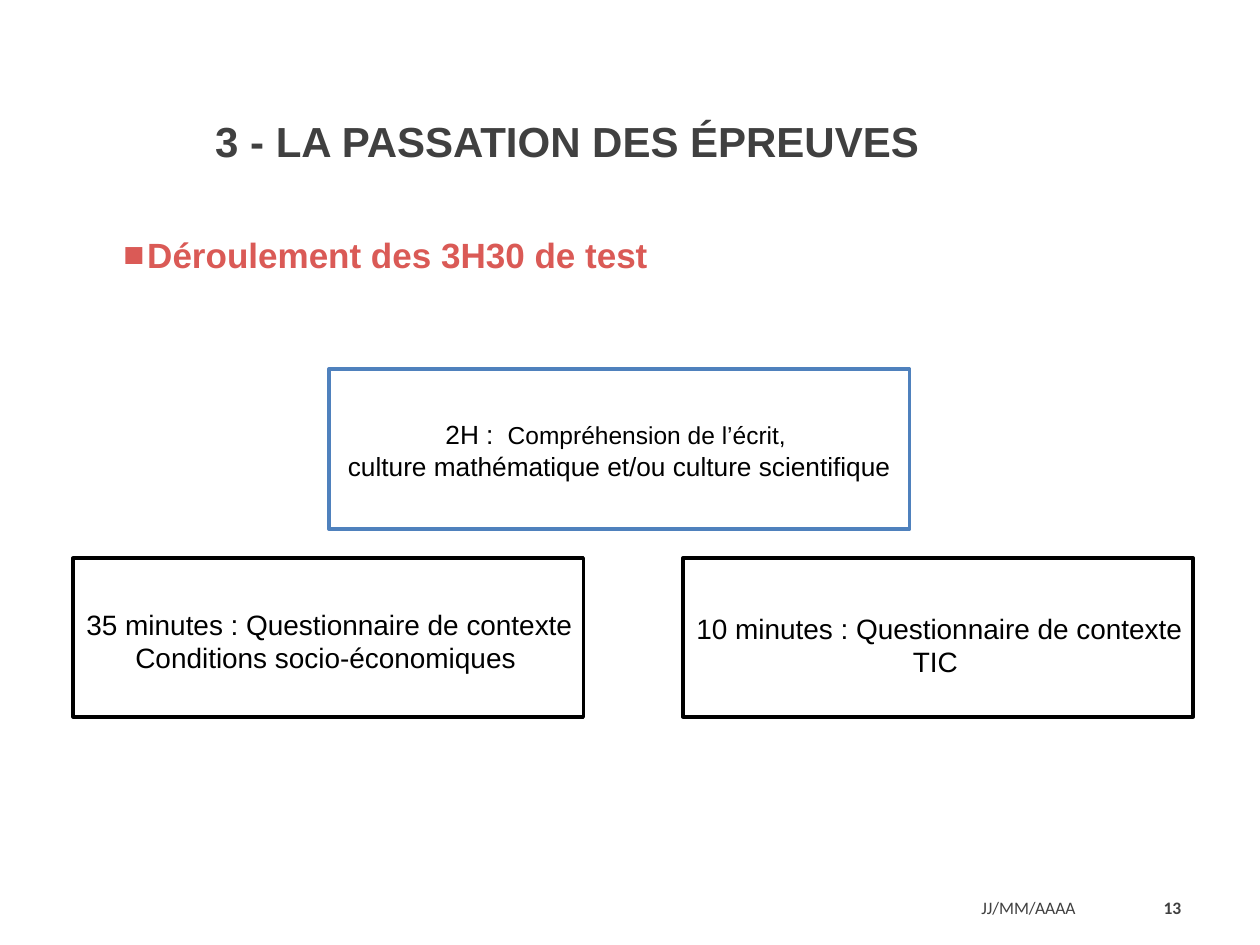
from pptx import Presentation
from pptx.dml.color import RGBColor
from pptx.enum.shapes import MSO_SHAPE
from pptx.enum.text import MSO_ANCHOR, PP_ALIGN
from pptx.oxml.ns import qn
from pptx.util import Inches, Pt
from lxml.etree import SubElement

BLACK = RGBColor(0x00, 0x00, 0x00)
GRAY = RGBColor(0x40, 0x40, 0x40)
RED = RGBColor(0xDA, 0x5A, 0x56)
BLUE = RGBColor(0x4F, 0x81, 0xBD)


def add_text(left, top, width, height, anchor=MSO_ANCHOR.TOP):
    box = slide.shapes.add_textbox(Inches(left), Inches(top), Inches(width), Inches(height))
    frame = box.text_frame
    frame.word_wrap = True
    frame.vertical_anchor = anchor
    return frame


def add_run(paragraph, text, size, color, bold=False, font="Arial"):
    run = paragraph.add_run()
    run.text = text
    run.font.name = font
    run.font.size = Pt(size)
    run.font.bold = bold
    run.font.color.rgb = color


prs = Presentation()
prs.slide_width = Inches(10)
prs.slide_height = Inches(7.5)
slide = prs.slides.add_slide(prs.slide_layouts[6])

title = add_text(1.61, 0.71, 8.62, 0.82, MSO_ANCHOR.MIDDLE)
add_run(title.paragraphs[0], "3 - LA PASSATION DES ÉPREUVES", 24, GRAY, True)

heading = add_text(0.88, 1.8, 7.71, 0.68).paragraphs[0]
heading_format = heading._p.get_or_add_pPr()
heading_format.set("marL", str(Inches(0.19)))
heading_format.set("indent", str(-Inches(0.19)))
bullet_color = SubElement(heading_format, qn("a:buClr"))
SubElement(bullet_color, qn("a:srgbClr")).set("val", str(RED))
SubElement(heading_format, qn("a:buFont")).set("typeface", "Arial")
SubElement(heading_format, qn("a:buChar")).set("char", "■")
add_run(heading, "Déroulement des 3H30 de test", 20, RED, True)

stages = [
    ((0.58, 4.43, 4.05, 1.26), BLACK, (0.4, 4.54, 4.43, 1.18),
     [[("35 minutes : Questionnaire de contexte", 16)],
      [("Conditions socio-économiques ", 16)]]),
    ((2.61, 2.93, 4.61, 1.27), BLUE, (2.61, 3.04, 4.61, 1.14),
     [[("2H : ", 15), (" Compréhension de l’écrit, ", 14)],
      [("culture mathématique et/ou culture scientifique", 15)]]),
    ((5.42, 4.43, 4.05, 1.26), BLACK, (5.24, 4.57, 4.43, 1.18),
     [[("10 minutes : Questionnaire de contexte", 16)],
      [("TIC ", 16)]]),
]
for border_place, border_color, label_place, lines in stages:
    border = slide.shapes.add_shape(MSO_SHAPE.RECTANGLE, *map(Inches, border_place))
    border.shadow.inherit = False
    border.fill.background()
    border.line.color.rgb = border_color
    border.line.width = Pt(2)

    label = add_text(*label_place)
    label.margin_top = Inches(0.28)
    for index, line in enumerate(lines):
        paragraph = label.add_paragraph() if index else label.paragraphs[0]
        paragraph.alignment = PP_ALIGN.CENTER
        for text, size in line:
            add_run(paragraph, text, size, BLACK)

date = add_text(7.69, 7.1, 0.98, 0.2, MSO_ANCHOR.MIDDLE)
add_run(date.paragraphs[0], "JJ/MM/AAAA", 10, GRAY, font="Calibri")

page_number = add_text(9.11, 7.1, 0.39, 0.2, MSO_ANCHOR.MIDDLE)
page_number.margin_left = page_number.margin_right = 0
page_number.paragraphs[0].alignment = PP_ALIGN.CENTER
add_run(page_number.paragraphs[0], "13", 10, GRAY, True, "Calibri")

prs.save("out.pptx")
